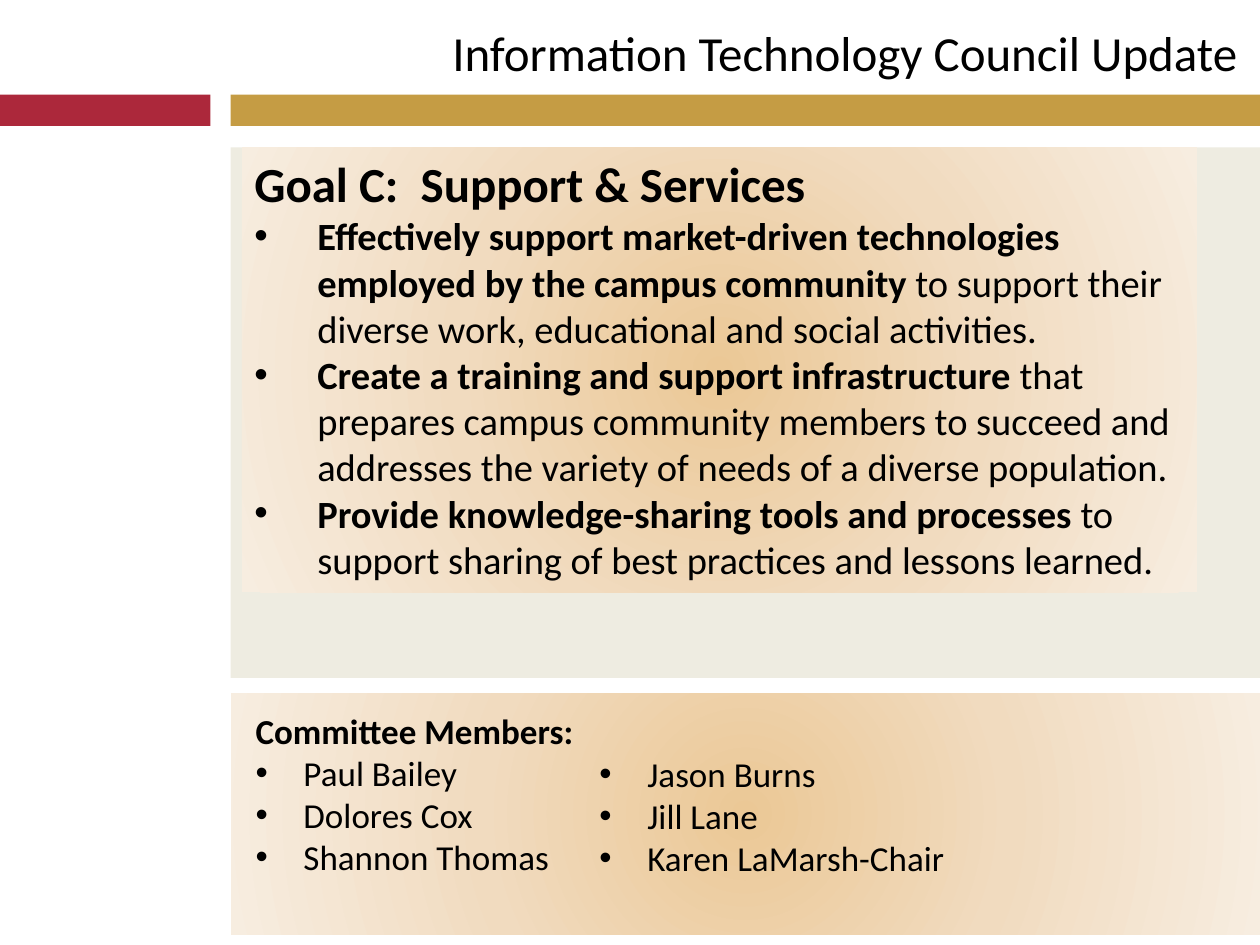
import pptx
import pptx.dml.color
import pptx.enum.shapes
import pptx.enum.text
import pptx.oxml
import pptx.oxml.ns
import pptx.util
from lxml import etree

Inches = pptx.util.Inches
COLORS = {
    "gold": "C59C44",
    "red": "AC283B",
    "panel": "EEECE1",
    "text": "000000",
    "glow_center": "EBC896",
    "glow_middle": "F1DBBF",
    "glow_edge": "F7EDE0",
}


def set_glow(shape):
    shape.fill.gradient()
    gradient = shape.element.spPr.find(pptx.oxml.ns.qn("a:gradFill"))
    for child in list(gradient):
        gradient.remove(child)
    stops = etree.SubElement(gradient, pptx.oxml.ns.qn("a:gsLst"))
    for position, name in ((0, "glow_center"), (50, "glow_middle"), (100, "glow_edge")):
        stop = etree.SubElement(stops, pptx.oxml.ns.qn("a:gs"), pos=str(position * 1000))
        etree.SubElement(stop, pptx.oxml.ns.qn("a:srgbClr"), val=COLORS[name])
    circle = etree.SubElement(gradient, pptx.oxml.ns.qn("a:path"), path="circle")
    etree.SubElement(circle, pptx.oxml.ns.qn("a:fillToRect"), l="50000", t="50000", r="50000", b="50000")


def write_lines(text_frame, lines, size, indent):
    text_frame.word_wrap = True
    text_frame.vertical_anchor = pptx.enum.text.MSO_ANCHOR.TOP
    for index, (bold_text, plain_text, bulleted, line_size) in enumerate(lines):
        paragraph = text_frame.paragraphs[0] if index == 0 else text_frame.add_paragraph()
        paragraph.alignment = pptx.enum.text.PP_ALIGN.LEFT
        if bulleted:
            properties = paragraph._p.get_or_add_pPr()
            properties.set("marL", str(Inches(indent)))
            properties.set("indent", str(-Inches(indent)))
            etree.SubElement(properties, pptx.oxml.ns.qn("a:buFont"), typeface="Arial")
            etree.SubElement(properties, pptx.oxml.ns.qn("a:buChar"), char="•")
        paragraph.font.name = "Calibri"
        paragraph.font.size = pptx.util.Pt(line_size or size)
        paragraph.font.color.rgb = pptx.dml.color.RGBColor.from_string(COLORS["text"])
        for text, bold in ((bold_text, True), (plain_text, False)):
            if text:
                run = paragraph.add_run()
                run.text = text
                run.font.bold = bold


presentation = pptx.Presentation()
presentation.slide_width = Inches(10)
presentation.slide_height = Inches(7.5)
slide = presentation.slides.add_slide(presentation.slide_layouts[5])

title = slide.shapes.title
title.left, title.top, title.width, title.height = Inches(2.81), Inches(0.13), Inches(7.11), Inches(0.57)
title.text_frame.text = "Information Technology Council Update"
title.text_frame.vertical_anchor = pptx.enum.text.MSO_ANCHOR.TOP
title_paragraph = title.text_frame.paragraphs[0]
title_paragraph.alignment = pptx.enum.text.PP_ALIGN.RIGHT
title_paragraph.font.name = "Calibri"
title_paragraph.font.size = pptx.util.Pt(28)
title_paragraph.font.color.rgb = pptx.dml.color.RGBColor.from_string(COLORS["text"])

blocks = {}
for role, left, top, width, height, color in (
    ("gold bar", 1.83, 0.75, 8.17, 0.25, "gold"),
    ("red bar", 0, 0.75, 1.67, 0.25, "red"),
    ("content panel", 1.83, 1.17, 8.17, 4.21, "panel"),
    ("goal", 1.92, 1.17, 7.58, 3.53, None),
    ("committee panel", 1.83, 5.5, 8.17, 1.92, None),
):
    shape = slide.shapes.add_shape(
        pptx.enum.shapes.MSO_SHAPE.RECTANGLE, Inches(left), Inches(top), Inches(width), Inches(height)
    )
    shape.shadow.inherit = False
    shape.line.fill.background()
    if color:
        shape.fill.solid()
        shape.fill.fore_color.rgb = pptx.dml.color.RGBColor.from_string(COLORS[color])
    else:
        set_glow(shape)
    blocks[role] = shape

goal_lines = [
    ("Goal C:  Support & Services", "", False, 28),
    (
        "Effectively support market-driven technologies employed by the campus community ",
        "to support their diverse work, educational and social activities.",
        True,
        None,
    ),
    (
        "Create a training and support infrastructure ",
        "that prepares campus community members to succeed and addresses the variety of needs "
        "of a diverse population.",
        True,
        None,
    ),
    (
        "Provide knowledge-sharing tools and processes ",
        "to support sharing of best practices and lessons learned.",
        True,
        None,
    ),
]
write_lines(blocks["goal"].text_frame, goal_lines, 22, 0.5)

for left, top, width, height, heading, members in (
    (1.93, 5.58, 2.75, 1.78, "Committee Members:", ("Paul Bailey", "Dolores Cox", "Shannon Thomas")),
    (4.66, 5.92, 2.96, 1.11, None, ("Jason Burns", "Jill Lane", "Karen LaMarsh-Chair")),
):
    text_box = slide.shapes.add_textbox(Inches(left), Inches(top), Inches(width), Inches(height))
    lines = [(heading, "", False, None)] if heading else []
    lines += [("", member, True, None) for member in members]
    write_lines(text_box.text_frame, lines, 20, 0.38)

presentation.save("out.pptx")
